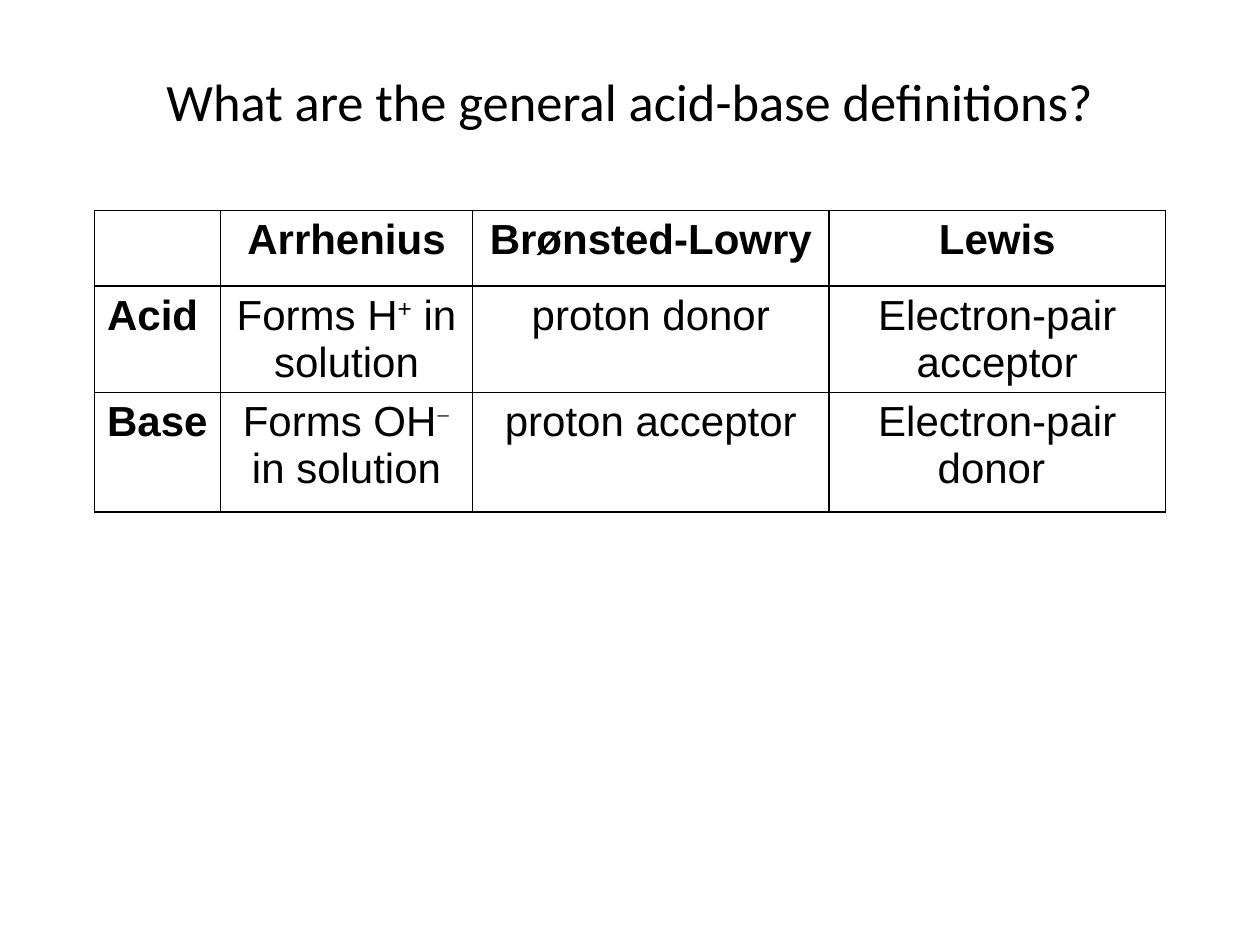
"""Build a slide with a table comparing the three acid-base definitions."""
from lxml import etree
from pptx import Presentation
from pptx.dml.color import RGBColor
from pptx.enum.text import PP_ALIGN
from pptx.oxml.ns import qn
from pptx.util import Inches, Pt

LEFT, CENTER = PP_ALIGN.LEFT, PP_ALIGN.CENTER
INK = "000000"
OUTER, INNER = 0.75, 1
COLUMN_WIDTHS = [1, 2, 2.83, 2.67]
ROW_HEIGHTS = [0.6, 0.84, 0.95]
DEFINITIONS = [
    ["", "Arrhenius", "Brønsted-Lowry", "Lewis"],
    ["Acid", ["Forms H", ("+", "Arial"), " in solution"],
     "proton donor", "Electron-pair acceptor"],
    ["Base", ["Forms OH", ("−", "Times New Roman"), " in solution"],
     "proton acceptor", "Electron-pair donor "],
]


def rgb(code):
    return RGBColor.from_string(code)


class DefinitionSlide:
    def __init__(self, slide, ink):
        self.slide = slide
        self.ink = ink

    def set_text(self, paragraph, content, face, size, align, bold=False):
        paragraph.alignment = align
        font = paragraph.font
        font.name, font.size, font.bold = face, Pt(size), bold
        font.color.rgb = rgb(self.ink)
        for piece in [content] if isinstance(content, str) else content:
            run = paragraph.add_run()
            if isinstance(piece, str):
                run.text = piece
            else:
                run.text, run.font.name = piece
                run.font._element.set("baseline", "30000")

    def title(self, text, left, top, width, height):
        box = self.slide.shapes.add_textbox(
            Inches(left), Inches(top), Inches(width), Inches(height))
        box.text_frame.word_wrap = True
        self.set_text(box.text_frame.paragraphs[0], text, "Calibri", 30, CENTER)

    def border(self, cell, widths):
        properties = cell._tc.get_or_add_tcPr()
        for position, (side, width) in enumerate(widths.items()):
            line = etree.Element(qn(f"a:ln{side}"), w=str(Pt(width)))
            fill = etree.SubElement(line, qn("a:solidFill"))
            etree.SubElement(fill, qn("a:srgbClr"), val=self.ink)
            properties.insert(position, line)

    def table(self, rows, left, top, widths, heights):
        grid = self.slide.shapes.add_table(
            len(rows), len(widths), Inches(left), Inches(top),
            Inches(sum(widths)), Inches(sum(heights))).table
        grid.first_row = grid.horz_banding = False
        for column, width in zip(grid.columns, widths):
            column.width = Inches(width)
        for row, height in zip(grid.rows, heights):
            row.height = Inches(height)
        last_row, last_column = len(rows) - 1, len(widths) - 1
        for r, contents in enumerate(rows):
            for c, content in enumerate(contents):
                cell = grid.cell(r, c)
                cell.fill.background()
                self.border(cell, {
                    "L": OUTER if c == 0 else INNER,
                    "R": OUTER if c == last_column else INNER,
                    "T": OUTER if r == 0 else INNER,
                    "B": OUTER if r == last_row else INNER,
                })
                if content:
                    self.set_text(cell.text_frame.paragraphs[0], content, "Arial", 24,
                                  CENTER if c else LEFT, bold=r == 0 or c == 0)


def main():
    presentation = Presentation()
    presentation.slide_width = Inches(10)
    presentation.slide_height = Inches(7.5)
    blank = presentation.slide_layouts[6]
    page = DefinitionSlide(presentation.slides.add_slide(blank), INK)
    page.table(DEFINITIONS, 0.75, 1.67, COLUMN_WIDTHS, ROW_HEIGHTS)
    page.title("What are the general acid-base definitions?", 0.75, 0.5, 8.5, 0.61)
    presentation.save("out.pptx")


if __name__ == "__main__":
    main()
